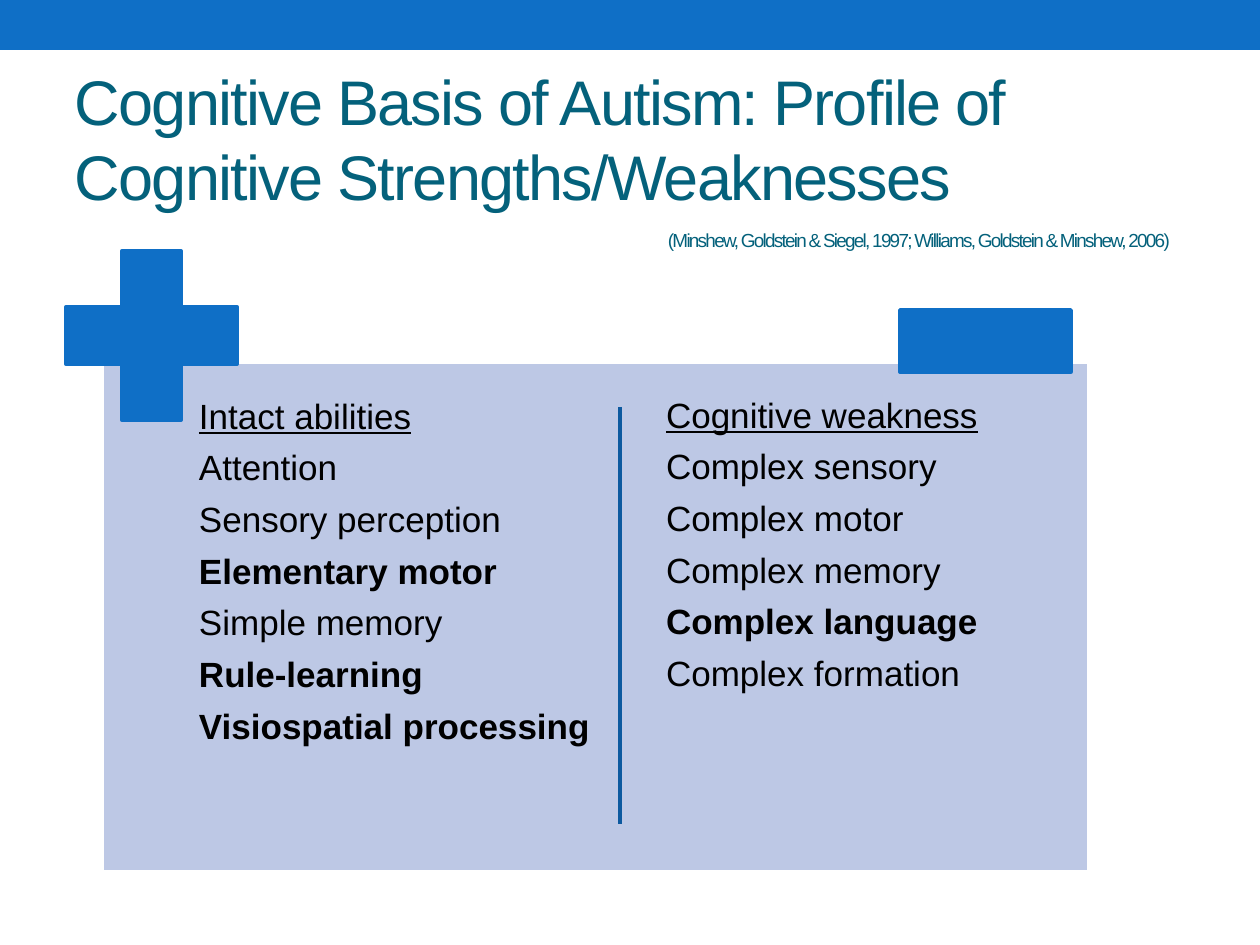
from lxml.etree import SubElement
from pptx import Presentation
from pptx.dml.color import RGBColor
from pptx.enum.shapes import MSO_CONNECTOR as Connector, MSO_SHAPE as Preset
from pptx.enum.text import MSO_ANCHOR as Anchor
from pptx.oxml.ns import qn
from pptx.util import Emu, Pt

PX = 914400 // 126
COLORS = {
    "blue": "0F6FC6",
    "divider": "0C599F",
    "panel": "BDC8E5",
    "title": "04617B",
    "text": "000000",
    "white": "FFFFFF",
}


def px(*lengths):
    return [Emu(length * PX) for length in lengths]


def rgb(name):
    return RGBColor.from_string(COLORS[name])


class SlideBuilder:
    font = "Arial"
    line_width = Pt(2.08)

    def __init__(self, slide):
        self.slide = slide

    def block(self, preset, box, fill, line=None):
        shape = self.slide.shapes.add_shape(preset, *px(*box))
        shape.shadow.inherit = False
        shape.fill.solid()
        shape.fill.fore_color.rgb = rgb(fill)
        if line:
            shape.line.color.rgb = rgb(line)
            shape.line.width = self.line_width
        else:
            shape.line.fill.background()
        return shape

    def line(self, start, end, color):
        connector = self.slide.shapes.add_connector(
            Connector.STRAIGHT, *px(*start, *end))
        connector.line.color.rgb = rgb(color)
        connector.line.width = self.line_width
        SubElement(connector._element.spPr, qn("a:effectLst"))

    def frame(self, box, insets, anchor=Anchor.TOP):
        frame = self.slide.shapes.add_textbox(*px(*box)).text_frame
        frame.word_wrap = True
        frame.vertical_anchor = anchor
        side, edge = px(*insets)
        frame.margin_left = frame.margin_right = side
        frame.margin_top = frame.margin_bottom = edge
        return frame

    def run(self, paragraph, text, size, color, bold=False, underline=False,
            spacing=0):
        run = paragraph.add_run()
        run.text = text
        font = run.font
        font.name, font.size = self.font, Pt(size)
        font.bold, font.underline = bold, underline
        font.color.rgb = rgb(color)
        if spacing:
            run._r.get_or_add_rPr().set("spc", str(spacing * 100))

    def title(self, box, heading, citation, citation_indent):
        frame = self.frame(box, (12, 6), Anchor.MIDDLE)
        main = frame.paragraphs[0]
        main.line_spacing = Pt(43)
        self.run(main, heading, 36, "title", spacing=-1)
        source = frame.add_paragraph()
        source.space_before = Pt(9)
        source._p.get_or_add_pPr().set("marL", str(citation_indent * PX))
        self.run(source, citation, 10.8, "title", spacing=-1)

    def ability_list(self, box, heading, abilities):
        frame = self.frame(box, (5, 5))
        rows = [(heading, False)] + abilities
        for index, (text, bold) in enumerate(rows):
            row = frame.add_paragraph() if index else frame.paragraphs[0]
            row.line_spacing = 0.9
            row.space_after = Pt(7.9)
            self.run(row, text, 20, "text", bold, underline=index == 0)


def main():
    prs = Presentation()
    prs.slide_width, prs.slide_height = px(1260, 945)
    builder = SlideBuilder(prs.slides.add_slide(prs.slide_layouts[6]))

    # Top band and title
    builder.block(Preset.RECTANGLE, (0, 0, 1260, 50), "blue")
    builder.title(
        (63, 73, 1134, 168),
        "Cognitive Basis of Autism: Profile of Cognitive Strengths/Weaknesses",
        "(Minshew, Goldstein & Siegel, 1997; "
        "Williams, Goldstein & Minshew, 2006)",
        citation_indent=593)

    # Panel with strengths and weaknesses
    builder.block(Preset.RECTANGLE, (102, 362, 987, 510), "panel", "white")
    builder.ability_list((194, 394, 455, 461), "Intact abilities", [
        ("Attention", False),
        ("Sensory perception", False),
        ("Elementary motor", True),
        ("Simple memory", False),
        ("Rule-learning", True),
        ("Visiospatial processing", True),
    ])
    builder.ability_list((661, 393, 459, 436), "Cognitive weakness", [
        ("Complex sensory", False),
        ("Complex motor", False),
        ("Complex memory", False),
        ("Complex language", True),
        ("Complex formation", False),
    ])

    # Plus and minus signs, divider
    plus = builder.block(Preset.CROSS, (66, 251, 171, 169), "blue", "blue")
    plus.adjustments[0] = 0.33
    builder.block(Preset.RECTANGLE, (900, 310, 171, 62), "blue", "blue")
    builder.line((620, 407), (620, 824), "divider")

    prs.save("out.pptx")


if __name__ == "__main__":
    main()
